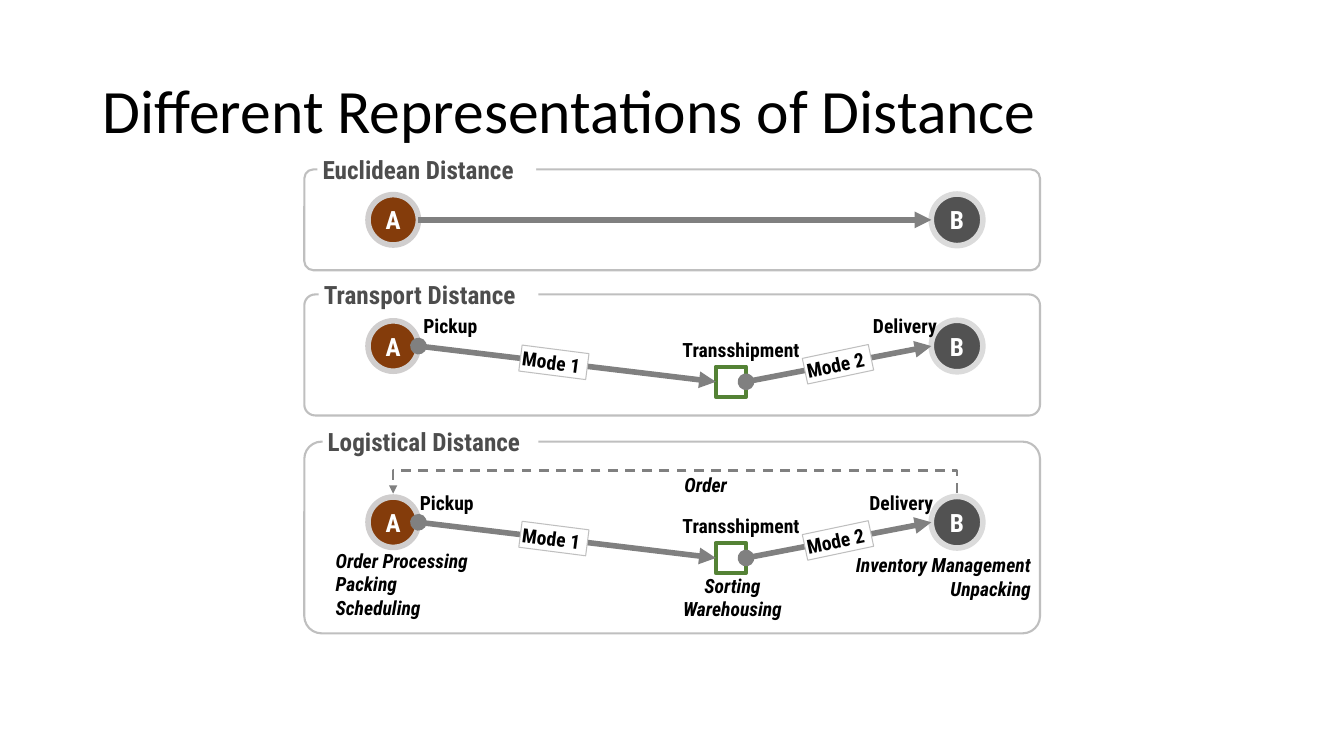
from dataclasses import dataclass

from lxml.etree import SubElement
from pptx import Presentation
from pptx.dml.color import RGBColor
from pptx.enum.dml import MSO_LINE
from pptx.enum.shapes import MSO_CONNECTOR, MSO_SHAPE
from pptx.enum.text import MSO_ANCHOR, MSO_AUTO_SIZE, PP_ALIGN
from pptx.oxml.ns import qn
from pptx.util import Cm, Pt


@dataclass(frozen=True)
class Theme:
    """Fonts, colours and type sizes of the slide."""
    title_font: str = "Calibri"
    font: str = "Roboto Condensed"
    title_size: int = 44
    label_size: int = 18
    note_size: int = 14
    black: str = "000000"
    white: str = "FFFFFF"
    heading: str = "4D4D4D"
    arrow: str = "808080"
    border: str = "BFBFBF"
    origin: str = "843C0B"
    origin_ring: str = "D0CECE"
    destination: str = "525252"
    destination_ring: str = "DBDBDB"
    hub: str = "548235"


THEME = Theme()
A_X, B_X = 9.91, 24.12
A_SIZE, B_SIZE = 1.27, 1.3
A_EDGE, B_EDGE = A_X + A_SIZE / 2, B_X - B_SIZE / 2
HUB_X, HUB_SIZE, HUB_DROP = 18.04, 0.76, 0.9


def style_text(tf, text, size, color, align=PP_ALIGN.LEFT, italic=False):
    """Fill a text frame and format all of its runs."""
    tf.text = text
    for p in tf.paragraphs:
        p.alignment = align
        for r in p.runs:
            r.font.name = THEME.font
            r.font.size = Pt(size)
            r.font.bold = True
            r.font.italic = italic
            r.font.color.rgb = RGBColor.from_string(color)


def fit_text(tf, inset_x=0, inset_y=0):
    """Let a frame fit its unwrapped text within the given insets."""
    tf.word_wrap = False
    tf.auto_size = MSO_AUTO_SIZE.SHAPE_TO_FIT_TEXT
    tf.margin_left = tf.margin_right = Cm(inset_x)
    tf.margin_top = tf.margin_bottom = Cm(inset_y)
    tf.vertical_anchor = MSO_ANCHOR.TOP


def add_box(s, kind, x, y, w, h, fill=None, line=None, width=1):
    """Add a preset shape with an optional fill and outline."""
    sp = s.shapes.add_shape(kind, Cm(x), Cm(y), Cm(w), Cm(h))
    sp.shadow.inherit = False
    if fill:
        sp.fill.solid()
        sp.fill.fore_color.rgb = RGBColor.from_string(fill)
    else:
        sp.fill.background()
    if line:
        sp.line.color.rgb = RGBColor.from_string(line)
        sp.line.width = Pt(width)
    else:
        sp.line.fill.background()
    return sp


def add_panel(s, heading, y, h, heading_x, heading_w):
    """Add a rounded frame with its heading set into the top edge."""
    sp = add_box(s, MSO_SHAPE.ROUNDED_RECTANGLE, 7.67, y, 18.54, h, line=THEME.border, width=1.5)
    sp.adjustments[0] = 0.09
    sp = add_box(s, MSO_SHAPE.RECTANGLE, heading_x, y - 0.39, heading_w, 0.76, THEME.white)
    style_text(sp.text_frame, heading, THEME.label_size, THEME.heading)
    fit_text(sp.text_frame, 0.13)


def add_node(s, letter, x, y, size, fill, ring):
    """Add a lettered circle centred on a point."""
    sp = add_box(s, MSO_SHAPE.OVAL, x - size / 2, y - size / 2, size, size, fill, ring, 4)
    tf = sp.text_frame
    tf.word_wrap = False
    tf.vertical_anchor = MSO_ANCHOR.MIDDLE
    style_text(tf, letter, THEME.label_size, THEME.white, PP_ALIGN.CENTER)


def add_ends(s, y):
    """Add the origin A and the destination B of a row."""
    add_node(s, "A", A_X, y, A_SIZE, THEME.origin, THEME.origin_ring)
    add_node(s, "B", B_X, y, B_SIZE, THEME.destination, THEME.destination_ring)


def add_note(s, text, x, y, w, align=PP_ALIGN.LEFT, italic=True):
    """Add a small text box whose height follows its lines."""
    h = 0.6 * len(text.split("\n"))
    tf = s.shapes.add_textbox(Cm(x), Cm(y), Cm(w), Cm(h)).text_frame
    style_text(tf, text, THEME.note_size, THEME.black, align, italic)
    fit_text(tf)


def add_arrow(s, x1, y1, x2, y2, kind=MSO_CONNECTOR.STRAIGHT, width=4, dot=False, dash=None):
    """Add an arrow, with a round tail if asked."""
    c = s.shapes.add_connector(kind, Cm(x1), Cm(y1), Cm(x2), Cm(y2))
    c.line.color.rgb = RGBColor.from_string(THEME.arrow)
    c.line.width = Pt(width)
    if dash:
        c.line.dash_style = dash
    ln = c.line._get_or_add_ln()
    if dot:
        SubElement(ln, qn("a:headEnd"), type="oval")
    SubElement(ln, qn("a:tailEnd"), type="triangle")
    SubElement(c._element.spPr, qn("a:effectLst"))
    return c


def add_mode(s, text, x, y, angle):
    """Add a tilted transport mode tag."""
    sp = add_box(s, MSO_SHAPE.RECTANGLE, x, y, 1.7, 0.66, THEME.white, THEME.border, 0.75)
    sp.rotation = angle
    style_text(sp.text_frame, text, THEME.note_size, THEME.black)
    fit_text(sp.text_frame, 0.05, 0.03)


def add_route(s, y, shift=0):
    """Add a two-leg route through a transshipment hub."""
    add_ends(s, y)
    hub_y = y + HUB_DROP
    hub = add_box(s, MSO_SHAPE.RECTANGLE, HUB_X, hub_y - HUB_SIZE / 2, HUB_SIZE, HUB_SIZE,
                  THEME.white, THEME.hub, 3)
    add_arrow(s, A_EDGE, y, HUB_X, hub_y, dot=True).end_connect(hub, 1)
    add_arrow(s, HUB_X + HUB_SIZE, hub_y, B_EDGE, y, dot=True).begin_connect(hub, 3)
    add_mode(s, "Mode 1", 13.11, y + 0.08, 7.3)
    add_mode(s, "Mode 2", 20.27, y + 0.13, 348.1)
    add_note(s, "Pickup", 10.67 - shift, y - 0.8, 1.5, italic=False)
    add_note(s, "Transshipment", 17.2, y - 0.2, 3.2, italic=False)
    add_note(s, "Delivery", 22 - shift, y - 0.8, 1.8, italic=False)


def add_order_arrow(s, y, rise):
    """Add the dashed order line that runs back over the row from B to A."""
    cx, half, step = (A_X + B_X) / 2, (B_X - A_X) / 2, 0.02
    c = add_arrow(s, cx + step / 2, y + half, cx - step / 2, y - half,
                  MSO_CONNECTOR.ELBOW, 1.75, dash=MSO_LINE.DASH)
    spPr = c._element.spPr
    spPr.find(qn("a:xfrm")).set("rot", str(270 * 60000))
    guides = spPr.find(qn("a:prstGeom")).get_or_add_avLst()
    SubElement(guides, qn("a:gd"), name="adj1", fmla=f"val {round(-rise / step * 100000)}")


def add_title(s, text):
    """Place and format the title placeholder."""
    sp = s.shapes.title
    sp.left, sp.top, sp.width, sp.height = Cm(2.34), Cm(1.02), Cm(29.21), Cm(3.68)
    tf = sp.text_frame
    tf.text = text
    tf.vertical_anchor = MSO_ANCHOR.MIDDLE
    p = tf.paragraphs[0]
    p.alignment = PP_ALIGN.LEFT
    p.line_spacing = 0.9
    font = p.runs[0].font
    font.name, font.size = THEME.title_font, Pt(THEME.title_size)
    font.color.rgb = RGBColor.from_string(THEME.black)


def main():
    """Build the slide and save it."""
    prs = Presentation()
    prs.slide_width, prs.slide_height = Cm(33.87), Cm(19.05)
    s = prs.slides.add_slide(prs.slide_layouts[5])
    add_title(s, "Different Representations of Distance")

    add_panel(s, "Euclidean Distance", 4.27, 2.54, 8, 5.51)
    add_ends(s, 5.54)
    add_arrow(s, A_EDGE, 5.54, B_EDGE, 5.54)

    add_panel(s, "Transport Distance", 7.42, 3.05, 8.03, 5.54)
    add_route(s, 8.72)

    add_panel(s, "Logistical Distance", 11.13, 4.83, 8.13, 5.44)
    add_route(s, 13.16, 0.09)
    add_order_arrow(s, 12.43, 0.56)
    add_note(s, "Order", 17.25, 11.91, 1.22)
    add_note(s, "Order Processing\nPacking\nScheduling", 8.46, 13.82, 3.6)
    add_note(s, "Sorting\nWarehousing", 17.09, 14.45, 2.74, PP_ALIGN.CENTER)
    add_note(s, "Inventory Management\nUnpacking", 21.13, 13.94, 4.85, PP_ALIGN.RIGHT)
    prs.save("out.pptx")


if __name__ == "__main__":
    main()
